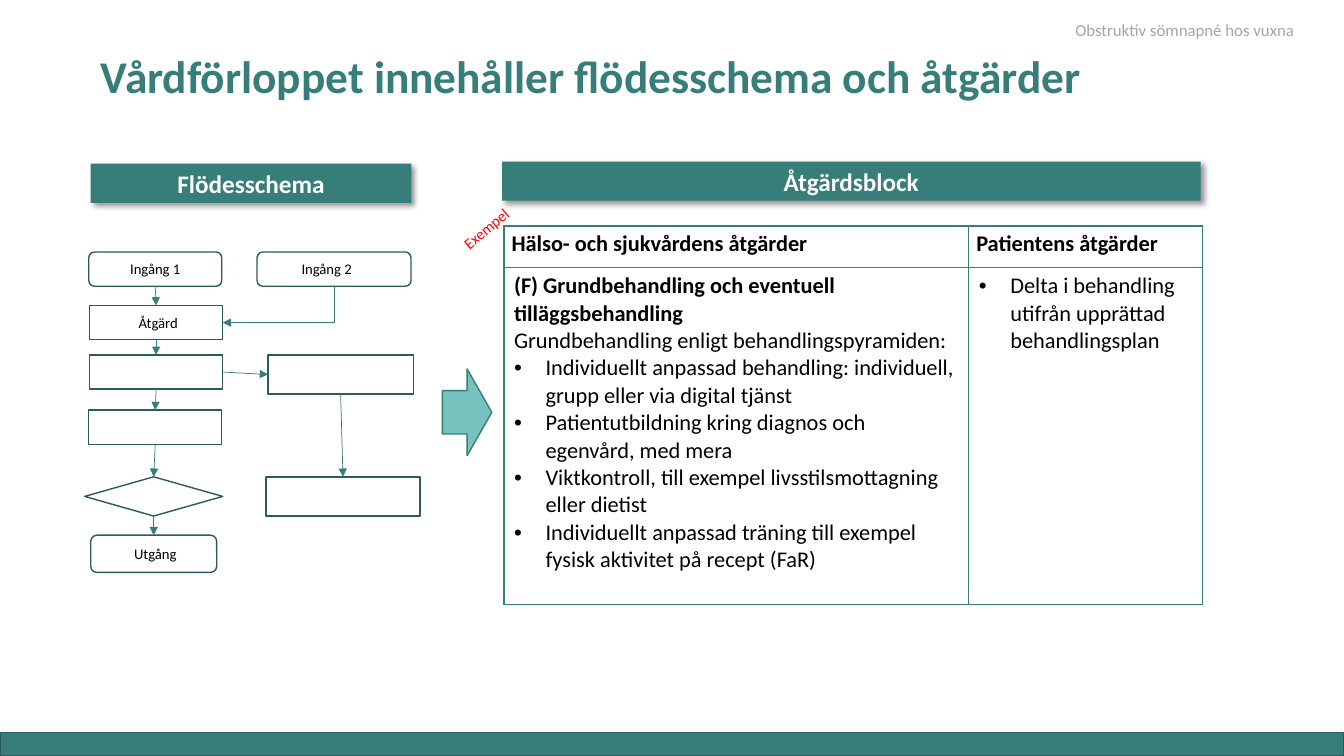
from dataclasses import dataclass
from lxml import etree
from pptx import Presentation, oxml
from pptx.dml.color import RGBColor
from pptx.enum import shapes as es, text as et
from pptx.oxml import ns
from pptx.util import Pt

TEAL = RGBColor(0x37, 0x7D, 0x7A)
DARK = RGBColor(0x29, 0x5C, 0x5A)
MINT = RGBColor(0x76, 0xC2, 0xBF)
WHITE = RGBColor(0xFF, 0xFF, 0xFF)
BLACK = RGBColor(0, 0, 0)
GREY = RGBColor(0xA6, 0xA6, 0xA6)
RED = RGBColor(0xFF, 0, 0)
FACE = "Calibri"
KIND = es.MSO_SHAPE
LEFT, MID = et.PP_ALIGN.LEFT, et.PP_ALIGN.CENTER
TOP, SIDE, FOOT, EDGE = 0, 1, 2, 3


@dataclass
class Node:
    name: str
    kind: KIND
    left: float
    top: float
    width: float
    height: float
    text: str = ""


@dataclass
class Link:
    start: str
    out: int
    end: str
    into: int


@dataclass
class Label:
    text: str
    left: float
    top: float
    width: float
    height: float
    size: float
    color: RGBColor = BLACK
    align: et.PP_ALIGN = LEFT
    turn: float = 0
    wrap: bool = True


NODES = [
    Node("in1", KIND.ROUNDED_RECTANGLE, 63.4, 180, 95, 24.5, "Ingång 1"),
    Node("in2", KIND.ROUNDED_RECTANGLE, 183.6, 180, 110, 24.5),
    Node("act", KIND.RECTANGLE, 64, 218.2, 95, 24.5),
    Node("step", KIND.RECTANGLE, 64, 253.5, 95, 24.5),
    Node("next", KIND.RECTANGLE, 63.4, 293, 95, 24.5),
    Node("choice", KIND.DIAMOND, 60.5, 340.6, 98.6, 28),
    Node("exit", KIND.ROUNDED_RECTANGLE, 64.8, 382.3, 90, 26.6),
    Node("aside", KIND.RECTANGLE, 191.5, 253.5, 103.7, 28),
    Node("last", KIND.RECTANGLE, 190, 340.6, 110, 28),
]
CHAIN = ["in1", "act", "step", "next", "choice", "exit"]
LINKS = [Link(a, FOOT, b, TOP) for a, b in zip(CHAIN, CHAIN[1:])] + [
    Link("step", EDGE, "aside", SIDE),
    Link("aside", FOOT, "last", TOP),
    Link("in2", FOOT, "act", EDGE),
]
HEADS = [
    Node("flow", KIND.RECTANGLE, 64.8, 116.9, 229, 28, "Flödesschema"),
    Node("block", KIND.RECTANGLE, 358.6, 115.4, 499, 28, "Åtgärdsblock"),
]
LABELS = [
    Label("Ingång 2", 185.8, 182.2, 95, 20, 10.5, align=MID),
    Label("Åtgärd", 65.5, 220.3, 95, 20, 10.5, align=MID),
    Label("Utgång", 63.4, 386, 95, 20, 10.5, align=MID),
    Label("Exempel", 321.1, 152.6, 53.3, 20.9, 11, RED, turn=320, wrap=False),
    Label("Obstruktiv sömnapné hos vuxna", 761, 10.8, 172.8, 21.6, 12, GREY),
]
CARE = [
    "Individuellt anpassad behandling: individuell, grupp eller via digital tjänst",
    "Patientutbildning kring diagnos och egenvård, med mera",
    "Viktkontroll, till exempel livsstilsmottagning eller dietist",
    "Individuellt anpassad träning till exempel fysisk aktivitet på recept (FaR)",
]
OWN = ["Delta i behandling utifrån upprättad behandlingsplan"]


def style(para, size: float, color: RGBColor, bold: bool = False, align=LEFT) -> None:
    para.alignment = align
    font = para.font
    font.name, font.size, font.bold = FACE, Pt(size), bold
    font.color.rgb = color


def add(node: Node, fill=None, line=None):
    box = slide.shapes.add_shape(
        node.kind, *map(Pt, (node.left, node.top, node.width, node.height)))
    box.shadow.inherit = False
    if fill is None:
        box.fill.background()
    else:
        box.fill.solid()
        box.fill.fore_color.rgb = fill
    if line is None:
        box.line.fill.background()
    else:
        box.line.color.rgb = line
        box.line.width = Pt(1)
    return box


def write(box, text: str, size: float, color: RGBColor, bold: bool = False) -> None:
    frame = box.text_frame
    frame.vertical_anchor = et.MSO_ANCHOR.MIDDLE
    frame.text = text
    style(frame.paragraphs[0], size, color, bold, MID)


def shade(box) -> None:
    glow = box._element.spPr.find(ns.qn("a:effectLst"))
    glow.append(oxml.parse_xml(
        f'<a:outerShdw {ns.nsdecls("a")} blurRad="{Pt(4)}" dist="{Pt(3)}" dir="2700000" '
        'algn="tl" rotWithShape="0"><a:srgbClr val="000000"><a:alpha val="40000"/>'
        '</a:srgbClr></a:outerShdw>'))


def join(link: Link, boxes: dict) -> None:
    bent = link.into == EDGE
    kind = es.MSO_CONNECTOR.ELBOW if bent else es.MSO_CONNECTOR.STRAIGHT
    wire = slide.shapes.add_connector(kind, Pt(0), Pt(0), Pt(0), Pt(0))
    wire.begin_connect(boxes[link.start], link.out)
    wire.end_connect(boxes[link.end], link.into)
    wire.line.color.rgb = TEAL
    wire.line.width = Pt(0.5)
    etree.SubElement(wire.line._get_or_add_ln(), ns.qn("a:tailEnd"), type="triangle")
    etree.SubElement(wire._element.spPr, ns.qn("a:effectLst"))
    if bent:
        turn(wire)


def turn(wire) -> None:
    wide, high = wire.width, wire.height
    midx, midy = wire.left + wide // 2, wire.top + high // 2
    prop = wire._element.spPr
    prop.find(ns.qn("a:prstGeom")).set("prst", "bentConnector2")
    form = prop.find(ns.qn("a:xfrm"))
    form.attrib.clear()
    form.set("rot", "5400000")
    wire.left, wire.top = midx - high // 2, midy - wide // 2
    wire.width, wire.height = high, wide


def label(item: Label) -> None:
    box = slide.shapes.add_textbox(
        *map(Pt, (item.left, item.top, item.width, item.height)))
    box.rotation = item.turn
    frame = box.text_frame
    frame.word_wrap = item.wrap
    frame.text = item.text
    style(frame.paragraphs[0], item.size, item.color, align=item.align)


def bullet(para) -> None:
    prop = para._p.get_or_add_pPr()
    prop.set("marL", str(Pt(22.5)))
    prop.set("indent", str(-Pt(22.5)))
    etree.SubElement(prop, ns.qn("a:buFont"), typeface="Arial")
    etree.SubElement(prop, ns.qn("a:buChar"), char="•")


def cell_text(cell, heads: list[str], plain: list[str], items: list[str]) -> None:
    frame = cell.text_frame
    frame.text = "\n".join(heads + plain + items)
    for spot, para in enumerate(frame.paragraphs):
        if spot >= len(heads) + len(plain):
            bullet(para)
        style(para, 16, BLACK, spot < len(heads))


def border(cell) -> None:
    prop = cell._tc.get_or_add_tcPr()
    for spot, side in enumerate(("lnL", "lnR", "lnT", "lnB")):
        prop.insert(spot, oxml.parse_xml(
            f'<a:{side} {ns.nsdecls("a")} w="{Pt(1)}"><a:solidFill>'
            f'<a:srgbClr val="{TEAL}"/></a:solidFill></a:{side}>'))


def care_table() -> None:
    grid = slide.shapes.add_table(2, 2, *map(Pt, (360, 161.5, 499, 270.5))).table
    for col, width in zip(grid.columns, (332, 167)):
        col.width = Pt(width)
    for row, height in zip(grid.rows, (29.5, 241)):
        row.height = Pt(height)
    for cell in grid.iter_cells():
        cell.fill.background()
        border(cell)
    for col, head in enumerate(("Hälso- och sjukvårdens åtgärder", "Patientens åtgärder")):
        cell = grid.cell(0, col)
        cell.margin_left = cell.margin_right = Pt(5.4)
        cell.margin_top = cell.margin_bottom = Pt(0)
        cell_text(cell, [head], [], [])
        cell.text_frame.paragraphs[0].line_spacing = 1.15
    cell_text(grid.cell(1, 0), ["(F) Grundbehandling och eventuell tilläggsbehandling"],
              ["Grundbehandling enligt behandlingspyramiden:"], CARE)
    cell_text(grid.cell(1, 1), [], [], OWN)


def headline() -> None:
    title = slide.shapes.title
    title.left, title.top, title.width, title.height = map(Pt, (64.8, 29.5, 720, 48.2))
    frame = title.text_frame
    frame.text = "Vårdförloppet innehåller flödesschema och åtgärder"
    frame.auto_size = et.MSO_AUTO_SIZE.NONE
    frame.vertical_anchor = et.MSO_ANCHOR.BOTTOM
    frame.paragraphs[0].line_spacing = 0.9
    style(frame.paragraphs[0], 32.4, TEAL, True)


deck = Presentation()
deck.slide_width, deck.slide_height = Pt(960), Pt(540)
slide = deck.slides.add_slide(deck.slide_layouts[5])
headline()
add(Node("base", KIND.RECTANGLE, 0, 523.4, 960, 16.6), TEAL, DARK)
for head in HEADS:
    bar = add(head, TEAL)
    shade(bar)
    write(bar, head.text, 18, WHITE, True)
    bar.text_frame.paragraphs[0].space_after = Pt(24)
add(Node("arrow", KIND.RIGHT_ARROW, 316, 263.5, 35.3, 62), MINT, TEAL)
care_table()
boxes = {}
for node in NODES:
    boxes[node.name] = add(node, WHITE if node.text else None, DARK)
    if node.text:
        write(boxes[node.name], node.text, 10.5, BLACK)
for link in LINKS:
    join(link, boxes)
for item in LABELS:
    label(item)
deck.save("out.pptx")
